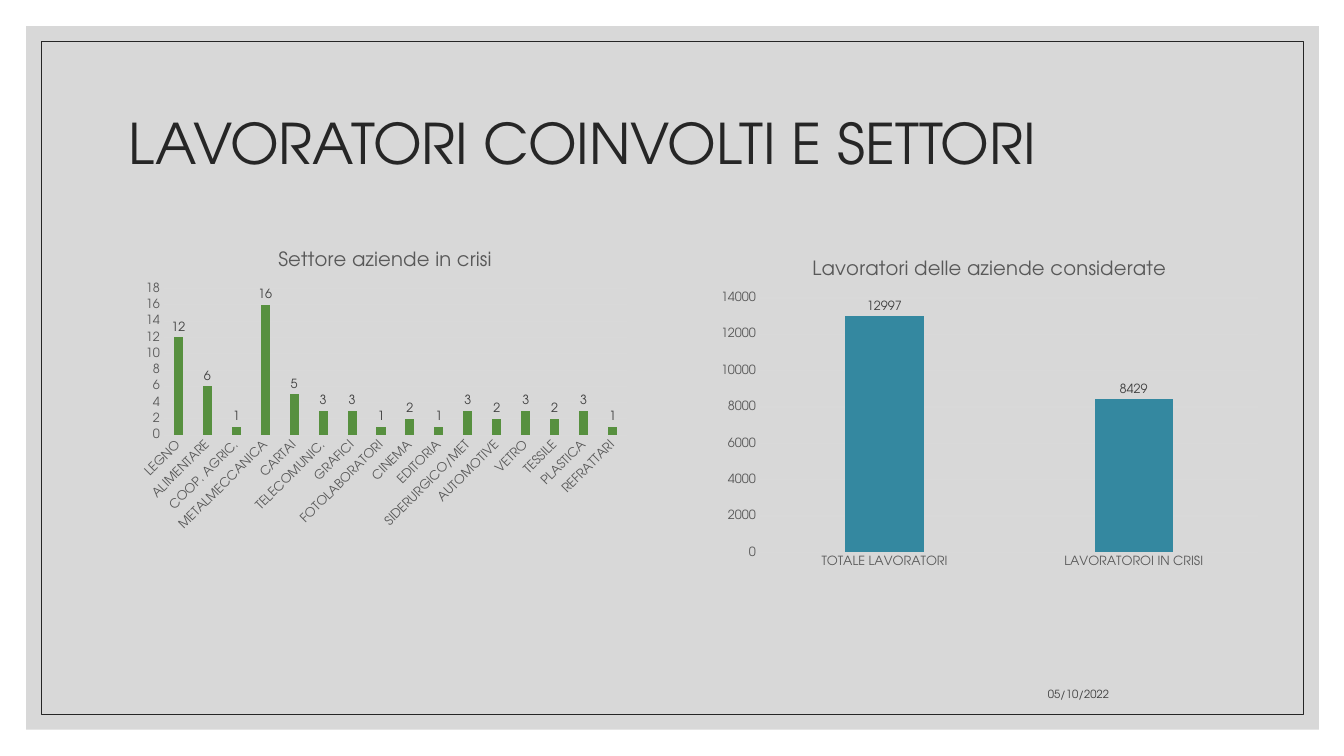
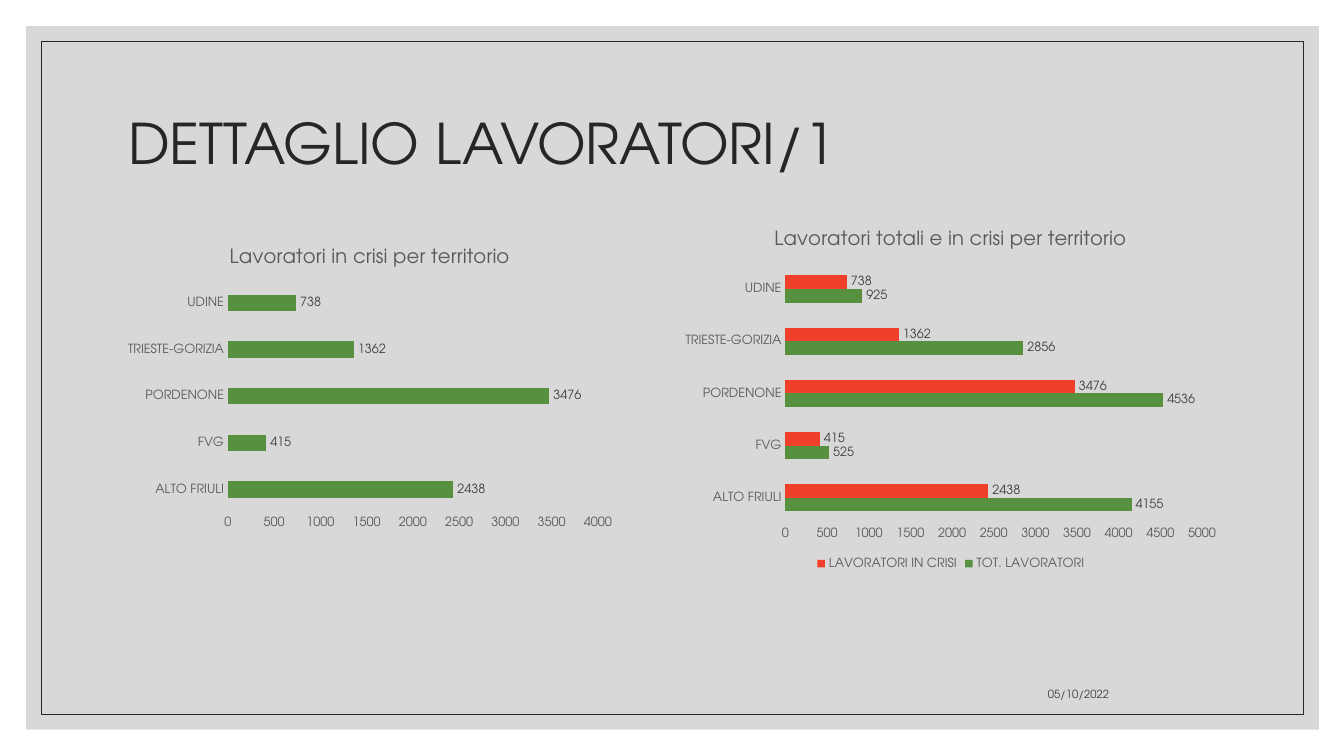
from dataclasses import dataclass

from lxml import etree
from pptx import Presentation
from pptx.chart import data as chart_data
from pptx.dml.color import RGBColor
from pptx.enum import chart as chart_enum, shapes, text
from pptx.oxml import ns
from pptx.util import Inches, Pt

FONT = "TeX Gyre Adventor"
PANEL = RGBColor(0xBF, 0xBF, 0xBF)
INK = RGBColor(0x26, 0x26, 0x26)
DARK_GREY = RGBColor(0x40, 0x40, 0x40)
MID_GREY = RGBColor(0x59, 0x59, 0x59)
GRID = RGBColor(0xD9, 0xD9, 0xD9)
GREEN = RGBColor(0x57, 0x90, 0x3F)
TEAL = RGBColor(0x34, 0x88, 0xA0)
RED = RGBColor(0xF0, 0x3F, 0x2B)

COLUMN = chart_enum.XL_CHART_TYPE.COLUMN_CLUSTERED
BAR = chart_enum.XL_CHART_TYPE.BAR_CLUSTERED
GAP = {COLUMN: 219, BAR: 182}
OVERLAP = {COLUMN: -27, BAR: 0}

DATE = "05/10/2022"
TERRITORIES = ("ALTO FRIULI", "FVG", "PORDENONE", "TRIESTE-GORIZIA", "UDINE")
WORKERS_IN_CRISIS = (2438, 415, 3476, 1362, 738)
SECTORS = {
    "LEGNO": 12, "ALIMENTARE": 6, "COOP. AGRIC.": 1, "METALMECCANICA": 16,
    "CARTAI": 5, "TELECOMUNIC.": 3, "GRAFICI": 3, "FOTOLABORATORI": 1,
    "CINEMA": 2, "EDITORIA": 1, "SIDERURGICO/MET": 3, "AUTOMOTIVE": 2,
    "VETRO": 3, "TESSILE": 2, "PLASTICA": 3, "REFRATTARI": 1,
}


@dataclass(frozen=True)
class Box:
    left: float
    top: float
    width: float
    height: float

    def lengths(self) -> tuple:
        return tuple(Inches(n) for n in (self.left, self.top, self.width, self.height))


@dataclass(frozen=True)
class Series:
    name: str
    values: tuple
    color: RGBColor


@dataclass(frozen=True)
class ChartSpec:
    title: str
    box: Box
    kind: int
    categories: tuple
    series: tuple
    label_angle: int = 0
    legend: bool = False


@dataclass(frozen=True)
class SlideSpec:
    title: str
    charts: tuple


PANEL_BOX = Box(0.26, 0.26, 12.82, 6.98)
FRAME_BOX = Box(0.41, 0.41, 12.52, 6.68)
TITLE_BOX = Box(1.17, 0.7, 11, 1.5)
DATE_BOX = Box(7.94, 6.6, 3.16, 0.4)

SLIDES = (
    SlideSpec("LAVORATORI COINVOLTI E SETTORI", (
        ChartSpec("Lavoratori delle aziende considerate", Box(7.04, 2.41, 5.55, 3.29),
                  COLUMN, ("TOTALE LAVORATORI", "LAVORATOROI IN CRISI"),
                  (Series("Lavoratori", (12997, 8429), TEAL),)),
        ChartSpec("Settore aziende in crisi", Box(1.32, 2.33, 5, 3),
                  COLUMN, tuple(SECTORS),
                  (Series("Aziende", tuple(SECTORS.values()), GREEN),), label_angle=-45),
    )),
    SlideSpec("DETTAGLIO LAVORATORI/1", (
        ChartSpec("Lavoratori totali e in crisi per territorio", Box(6.69, 2.11, 5.48, 3.58),
                  BAR, TERRITORIES,
                  (Series("TOT. LAVORATORI", (4155, 525, 4536, 2856, 925), GREEN),
                   Series("LAVORATORI IN CRISI", WORKERS_IN_CRISIS, RED)), legend=True),
        ChartSpec("Lavoratori in crisi per territorio", Box(1.17, 2.3, 5, 3),
                  BAR, TERRITORIES,
                  (Series("LAVORATORI IN CRISI", WORKERS_IN_CRISIS, GREEN),)),
    )),
)


def style_font(font, size: float, color: RGBColor) -> None:
    font.name = FONT
    font.size = Pt(size)
    font.bold = False
    font.color.rgb = color


def add_run(paragraph, words: str, size: float, color: RGBColor) -> None:
    run = paragraph.add_run()
    run.text = words
    style_font(run.font, size, color)


def place(shape, box: Box) -> None:
    shape.left, shape.top, shape.width, shape.height = box.lengths()


def add_background(slide, layout) -> None:
    panel, frame = (
        slide.shapes.add_shape(shapes.MSO_SHAPE.RECTANGLE, *box.lengths())
        for box in (PANEL_BOX, FRAME_BOX)
    )
    panel.fill.solid()
    panel.fill.fore_color.rgb = PANEL
    color = panel.fill._xPr.find(".//" + ns.qn("a:srgbClr"))
    etree.SubElement(color, ns.qn("a:alpha")).set("val", "60000")
    panel.line.fill.background()
    frame.fill.background()
    frame.line.color.rgb = INK
    frame.line.width = Pt(0.5)
    for offset, shape in enumerate((panel, frame)):
        shape.shadow.inherit = False
        shape.element.nvSpPr.cNvPr.set("id", str(100 + offset))
        layout.shapes.element.insert(2 + offset, shape.element)


def add_title(slide, words: str) -> None:
    title = slide.shapes.title
    place(title, TITLE_BOX)
    frame = title.text_frame
    frame.auto_size = text.MSO_AUTO_SIZE.NONE
    frame.vertical_anchor = text.MSO_ANCHOR.MIDDLE
    paragraph = frame.paragraphs[0]
    paragraph.alignment = text.PP_ALIGN.LEFT
    paragraph.line_spacing = 0.9
    add_run(paragraph, words, 40, INK)


def add_date(slide) -> None:
    frame = slide.shapes.add_textbox(*DATE_BOX.lengths()).text_frame
    frame.word_wrap = True
    frame.vertical_anchor = text.MSO_ANCHOR.BOTTOM
    paragraph = frame.paragraphs[0]
    paragraph.alignment = text.PP_ALIGN.RIGHT
    add_run(paragraph, DATE, 8, DARK_GREY)


def style_axes(chart, label_angle: int) -> None:
    category_axis, value_axis = chart.category_axis, chart.value_axis
    for axis in (category_axis, value_axis):
        axis.major_tick_mark = chart_enum.XL_TICK_MARK.NONE
        axis.minor_tick_mark = chart_enum.XL_TICK_MARK.NONE
        style_font(axis.tick_labels.font, 9, MID_GREY)
    category_axis.format.line.color.rgb = GRID
    category_axis.format.line.width = Pt(0.75)
    value_axis.format.line.fill.background()
    value_axis.has_major_gridlines = True
    value_axis.major_gridlines.format.line.color.rgb = GRID
    value_axis.major_gridlines.format.line.width = Pt(0.75)
    if label_angle:
        body = category_axis._element.find(".//" + ns.qn("a:bodyPr"))
        body.set("rot", str(label_angle * 60000))
        body.set("vert", "horz")


def add_chart(slide, spec: ChartSpec) -> None:
    values = chart_data.CategoryChartData()
    values.categories = spec.categories
    for series in spec.series:
        values.add_series(series.name, series.values)
    chart = slide.shapes.add_chart(spec.kind, *spec.box.lengths(), values).chart
    chart.font.name = FONT
    chart.font.size = Pt(10)
    chart.has_title = True
    add_run(chart.chart_title.text_frame.paragraphs[0], spec.title, 14, MID_GREY)
    chart.chart_title.include_in_layout = False
    style_axes(chart, spec.label_angle)

    plot = chart.plots[0]
    plot.vary_by_categories = False
    plot.gap_width = GAP[spec.kind]
    plot.overlap = OVERLAP[spec.kind]
    for drawn, series in zip(plot.series, spec.series):
        drawn.format.fill.solid()
        drawn.format.fill.fore_color.rgb = series.color
        drawn.invert_if_negative = False
        labels = drawn.data_labels
        labels.show_value = True
        labels.position = chart_enum.XL_LABEL_POSITION.OUTSIDE_END
        style_font(labels.font, 9, DARK_GREY)

    chart.has_legend = spec.legend
    if spec.legend:
        chart.legend.position = chart_enum.XL_LEGEND_POSITION.BOTTOM
        chart.legend.include_in_layout = False
        style_font(chart.legend.font, 9, MID_GREY)


def main() -> None:
    presentation = Presentation()
    presentation.slide_width = Inches(13.33)
    presentation.slide_height = Inches(7.5)
    layout = presentation.slide_layouts.get_by_name("Title Only")
    for number, spec in enumerate(SLIDES):
        slide = presentation.slides.add_slide(layout)
        if number == 0:
            add_background(slide, layout)
        add_title(slide, spec.title)
        add_date(slide)
        for chart in spec.charts:
            add_chart(slide, chart)
    presentation.save("out.pptx")


if __name__ == "__main__":
    main()
